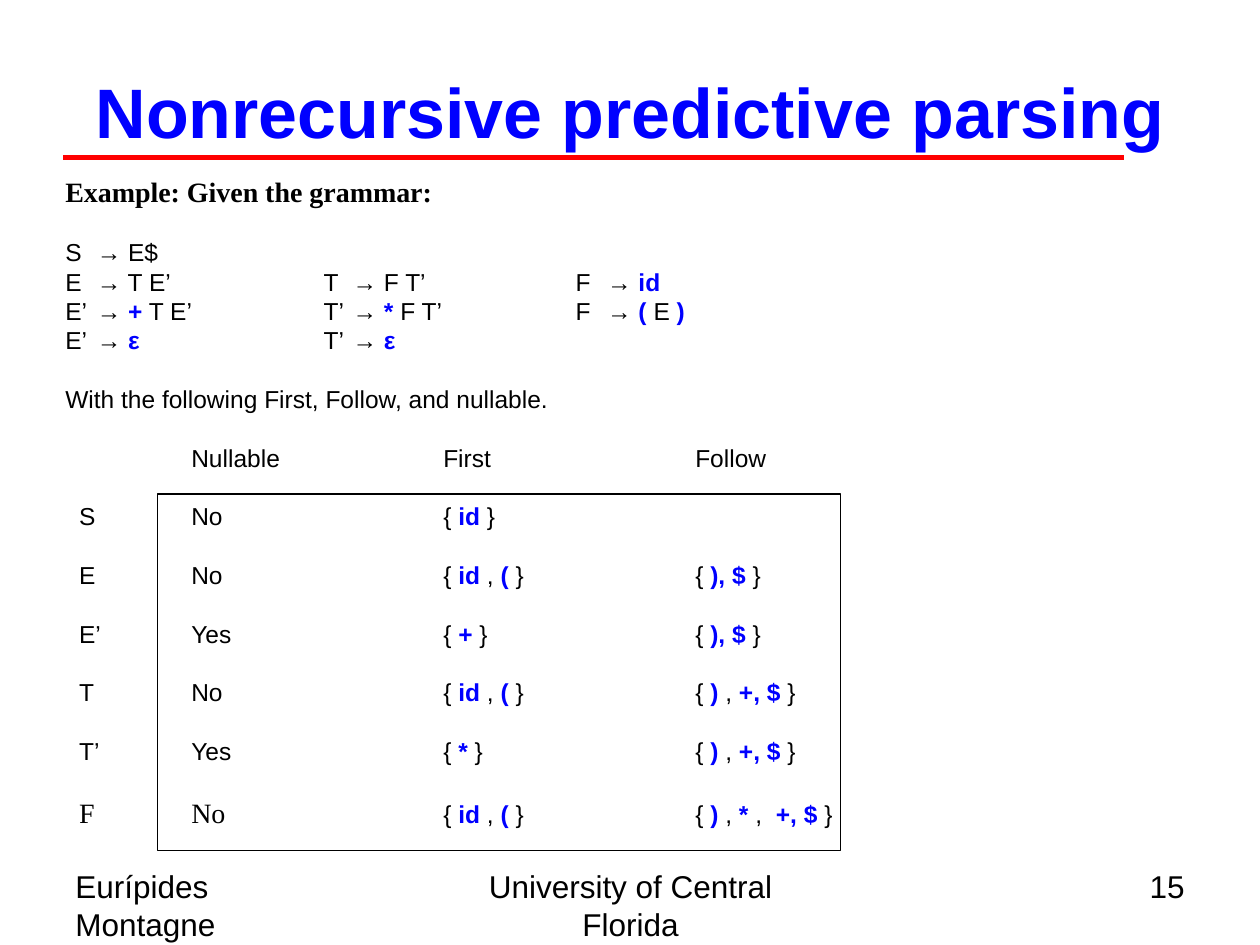
from dataclasses import dataclass

from lxml import etree
from pptx import Presentation
from pptx.dml.color import RGBColor
from pptx.enum import shapes, text
from pptx.oxml import ns
from pptx.util import Inches, Length, Pt


@dataclass(frozen=True)
class Theme:
    ink: RGBColor = RGBColor(0, 0, 0)
    blue: RGBColor = RGBColor(0, 0, 255)
    red: RGBColor = RGBColor(255, 0, 0)
    sans: str = "Arial"
    serif: str = "Times New Roman"
    title: Length = Pt(40)
    foot: Length = Pt(18)
    head: Length = Pt(16)
    body: Length = Pt(14)
    pitch: Length = Pt(16.75)  # height of a body line
    tall: Length = Pt(19.7)    # height of a serif line


@dataclass(frozen=True)
class Line:
    words: str              # terminals stand between backticks
    tabs: tuple = ()        # tab stops in inches
    gap: bool = True        # one line of space before
    lead: str = ""          # opening words in the serif face
    bold: bool = False      # weight of the lead


@dataclass(frozen=True)
class Label:
    words: str
    box: tuple
    align: text.PP_ALIGN
    size: Length
    color: RGBColor
    bold: bool = False
    anchor: text.MSO_ANCHOR = text.MSO_ANCHOR.TOP


THEME = Theme()
RULES = (0.25, 2.05, 2.28, 4.05, 4.3)
COLS = (0.11, 1, 3, 5)

LINES = [
    Line("", gap=False, lead="Example: Given the grammar:", bold=True),
    # Grammar
    Line("S\t→ E$", RULES),
    Line("E\t→ T E’\tT\t→ F T’\tF\t→ `id`", RULES, False),
    Line("E’\t→ `+` T E’\tT’\t→ `*` F T’\tF\t→ `( `E `)`", RULES, False),
    Line("E’\t→ `ε`\tT’\t→ `ε`", RULES, False),
    Line("With the following First, Follow, and nullable."),
    # Sets
    Line("\tNullable\tFirst\tFollow", COLS[1:]),
    Line("\tS\tNo\t{ `id` }", COLS),
    Line("\tE\tNo\t{ `id` , `(` }\t{ `), $` }", COLS),
    Line("\tE’\tYes\t{ `+` }\t{ `), $` }", COLS),
    Line("\tT\tNo\t{ `id` , `( `}\t{ `)` , `+, $` }", COLS),
    Line("\tT’\tYes\t{ `*` }\t{ `)` , `+, $` }", COLS),
    Line("{ `id` , `(` }\t{ `)` , `*` ,  `+, $` }", COLS, lead="\tF\tNo\t"),
]

LEFT, MID, RIGHT = text.PP_ALIGN.LEFT, text.PP_ALIGN.CENTER, text.PP_ALIGN.RIGHT
LABELS = [
    Label("Eurípides Montagne", (0.5, 6.83, 2.33, 0.52), LEFT, THEME.foot, THEME.ink),
    Label("University of Central Florida", (3.42, 6.83, 3.17, 0.52), MID,
          THEME.foot, THEME.ink),
    Label("15", (7.17, 6.83, 2.33, 0.52), RIGHT, THEME.foot, THEME.ink),
    Label("Nonrecursive predictive parsing", (0.5, 0.25, 9, 1.25), MID,
          THEME.title, THEME.blue, True, text.MSO_ANCHOR.MIDDLE),
]


def frame(slide, box: tuple):
    area = slide.shapes.add_textbox(*map(Inches, box)).text_frame
    area.word_wrap = True
    return area


def label(slide, item: Label) -> None:
    area = frame(slide, item.box)
    area.vertical_anchor = item.anchor
    para = area.paragraphs[0]
    para.text, para.alignment = item.words, item.align
    font = para.font
    font.name, font.size, font.bold = THEME.sans, item.size, item.bold
    font.color.rgb = item.color


def stops(para, tabs: tuple) -> None:
    props = para._p.get_or_add_pPr()
    group = etree.Element(ns.qn("a:tabLst"))
    for tab in tabs:
        etree.SubElement(group, ns.qn("a:tab"), pos=str(Inches(tab)), algn="l")
    # Tab stops come before the default run properties
    props.find(ns.qn("a:defRPr")).addprevious(group)


def write(para, line: Line) -> None:
    para.line_spacing = THEME.tall if line.lead else THEME.pitch
    para.space_before = THEME.pitch if line.gap else Pt(0)
    font = para.font
    font.name, font.size = THEME.sans, THEME.body
    font.color.rgb = THEME.ink
    if line.tabs:
        stops(para, line.tabs)
    if line.lead:
        run = para.add_run()
        run.text = line.lead
        run.font.name, run.font.size = THEME.serif, THEME.head
        run.font.bold = line.bold
    for i, part in enumerate(line.words.split("`")):
        if part:
            run = para.add_run()
            run.text = part
            if i % 2:
                run.font.bold = True
                run.font.color.rgb = THEME.blue


def main() -> None:
    deck = Presentation()
    deck.slide_width, deck.slide_height = Inches(10), Inches(7.5)
    slide = deck.slides.add_slide(deck.slide_layouts[6])

    # Title and footer
    for item in LABELS:
        label(slide, item)

    # Rule under the title
    rule = slide.shapes.add_connector(
        shapes.MSO_CONNECTOR.STRAIGHT,
        Inches(0.5), Inches(1.25), Inches(8.92), Inches(1.25))
    rule.line.color.rgb, rule.line.width = THEME.red, Pt(3)
    etree.SubElement(rule._element.spPr, ns.qn("a:effectLst"))

    # Grammar and sets
    area = frame(slide, (0.42, 1.33, 8.17, 5.89))
    for i, line in enumerate(LINES):
        write(area.add_paragraph() if i else area.paragraphs[0], line)

    # Border round the sets
    edge = slide.shapes.add_shape(
        shapes.MSO_SHAPE.RECTANGLE,
        Inches(1.25), Inches(3.92), Inches(5.42), Inches(2.83))
    edge.shadow.inherit = False
    edge.fill.background()
    edge.line.color.rgb, edge.line.width = THEME.ink, Pt(0.75)

    deck.save("out.pptx")


if __name__ == "__main__":
    main()
